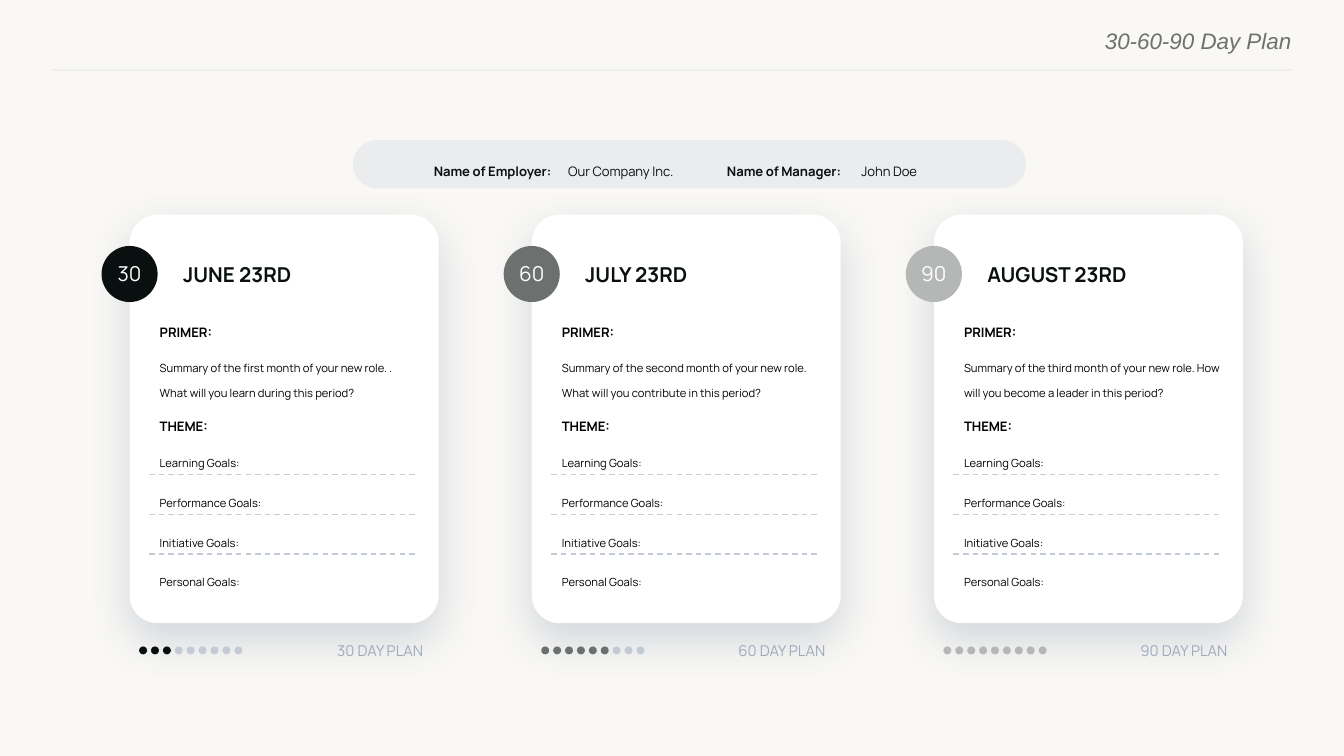
from dataclasses import dataclass

from lxml.etree import SubElement
from pptx import Presentation
from pptx.dml.color import RGBColor
from pptx.enum.dml import MSO_LINE_DASH_STYLE as Dash
from pptx.enum.shapes import MSO_CONNECTOR as Connector, MSO_SHAPE as Shape
from pptx.enum.text import MSO_ANCHOR as Anchor, PP_ALIGN as Align
from pptx.oxml.ns import qn
from pptx.util import Cm, Pt

PAPER = RGBColor(0xF9, 0xF8, 0xF5)
WHITE = RGBColor(0xFF, 0xFF, 0xFF)
BLACK = RGBColor(0x00, 0x00, 0x00)
INK = RGBColor(0x09, 0x10, 0x0F)
GRAY = RGBColor(0x6C, 0x70, 0x6F)
SILVER = RGBColor(0xB5, 0xB7, 0xB7)
MIST = RGBColor(0x9E, 0xAA, 0xBE)
RULE = RGBColor(0xC4, 0xCC, 0xD7)
HAIRLINE = RGBColor(0xEF, 0xEF, 0xEF)
SHADOW = RGBColor(0x47, 0x5D, 0x84)

FONT = "Manrope"
HEADING_SPACING, BODY_SPACING = 1.67, 1.88
CARD_LEFT, CARD_PITCH = 2.45, 7.6
GOAL_TOP, RULE_TOP, GOAL_PITCH = 8.31, 8.97, 0.75
DOT_COUNT, DOT_SPAN = 9, 1.8
GOALS = ("Learning Goals:", "Performance Goals:", "Initiative Goals:", "Personal Goals:")


@dataclass(frozen=True)
class Plan:
    days: int
    color: RGBColor
    date: str
    primer: str
    primer_width: float = 5.0
    primer_height: float = 1.55


@dataclass(frozen=True)
class Detail:
    label: str
    value: str
    left: float
    width: float


PLANS = (
    Plan(30, INK, "JUNE 23RD",
         "Summary of the first month of your new role. . What will you learn during this period?"),
    Plan(60, GRAY, "JULY 23RD",
         "Summary of the second month of your new role. What will you contribute in this period?"),
    Plan(90, SILVER, "AUGUST 23RD",
         "Summary of the third month of your new role. How will you become a leader in this period?",
         5.18, 1.93),
)
DETAILS = (
    Detail("Name of Employer:", "Our Company Inc.", 8.1, 5.54),
    Detail("Name of Manager:", "John Doe", 13.64, 4.32),
)


def set_alpha(shape, percent: int) -> None:
    color = shape.fill._xPr.find(qn("a:solidFill"))[0]
    SubElement(color, qn("a:alpha"), val=str(percent * 1000))


def add_filled(shapes, kind, left: float, top: float, width: float, height: float,
               color: RGBColor):
    shape = shapes.add_shape(kind, Cm(left), Cm(top), Cm(width), Cm(height))
    shape.shadow.inherit = False
    shape.fill.solid()
    shape.fill.fore_color.rgb = color
    shape.line.fill.background()
    return shape


def add_soft_shadow(shape) -> None:
    effects = shape._element.spPr.find(qn("a:effectLst"))
    outer = SubElement(effects, qn("a:outerShdw"), blurRad=str(Pt(23)), dist=str(Pt(8.7)),
                       dir="5400000", algn="t", rotWithShape="0")
    color = SubElement(outer, qn("a:srgbClr"), val=str(SHADOW))
    SubElement(color, qn("a:alpha"), val="22000")


def add_rule(shapes, left: float, top: float, width: float, color: RGBColor):
    rule = shapes.add_connector(Connector.STRAIGHT, Cm(left), Cm(top), Cm(left + width), Cm(top))
    rule.line.color.rgb = color
    rule.line.width = Pt(0.75)
    SubElement(rule._element.spPr, qn("a:effectLst"))
    return rule


def set_margins(frame, side: float, top: float, bottom: float) -> None:
    frame.margin_left = frame.margin_right = Cm(side)
    frame.margin_top, frame.margin_bottom = Cm(top), Cm(bottom)


def add_frame(shapes, left: float, top: float, width: float, height: float, side: float = 0.1):
    frame = shapes.add_textbox(Cm(left), Cm(top), Cm(width), Cm(height)).text_frame
    frame.word_wrap = True
    set_margins(frame, side, 0.1, 0.1)
    return frame


def style(paragraph, size: float, color: RGBColor, bold: bool | None = None,
          spacing: float | None = None, align=None, name: str = FONT) -> None:
    font = paragraph.font
    font.name, font.size, font.bold = name, Pt(size), bold
    font.color.rgb = color
    paragraph.line_spacing = spacing
    paragraph.alignment = align


def write(paragraph, text: str, size: float, color: RGBColor, **options) -> None:
    paragraph.text = text
    style(paragraph, size, color, **options)


def draw_header(slide) -> None:
    title = slide.shapes.title
    title.left, title.top, title.width, title.height = Cm(12.5), Cm(0.51), Cm(11.91), Cm(0.46)
    frame = title.text_frame
    frame.vertical_anchor = Anchor.TOP
    set_margins(frame, 0, 0, 0)
    heading = frame.paragraphs[0]
    write(heading, "30-60-90 Day Plan", 12, GRAY, align=Align.RIGHT, name="Arial")
    heading.font.italic = True
    add_rule(slide.shapes, 0.99, 1.32, 23.42, HAIRLINE)


def draw_details(slide) -> None:
    shapes = slide.shapes.add_group_shape().shapes
    pill = add_filled(shapes, Shape.ROUNDED_RECTANGLE, 6.67, 2.65, 12.72, 0.91, RULE)
    pill.adjustments[0] = 0.5
    set_alpha(pill, 25)
    for detail in DETAILS:
        line = add_frame(shapes, detail.left, 2.79, detail.width, 0.58).paragraphs[0]
        style(line, 7, INK, spacing=HEADING_SPACING)
        label = line.add_run()
        label.text = detail.label
        label.font.bold = True
        line.add_run().text = f"\t{detail.value}"


def draw_progress(slide, plan: Plan, left: float) -> None:
    dots = slide.shapes.add_group_shape().shapes
    for index in range(DOT_COUNT):
        done = index < plan.days // 10
        dot = add_filled(dots, Shape.OVAL, left + 0.18 + index * DOT_SPAN / (DOT_COUNT - 1),
                         12.22, 0.15, 0.15, plan.color if done else MIST)
        if not done:
            set_alpha(dot, 50)
    caption = add_frame(slide.shapes, left + 1.94, 12.04, 3.71, 0.53)
    caption.vertical_anchor = Anchor.MIDDLE
    write(caption.paragraphs[0], f"{plan.days} DAY PLAN", 8, MIST, align=Align.RIGHT)


def draw_plan(slide, plan: Plan, left: float) -> None:
    shapes = slide.shapes
    text_left = left + 0.47
    card = add_filled(shapes, Shape.ROUNDED_RECTANGLE, left, 4.06, 5.84, 7.72, WHITE)
    card.adjustments[0] = 0.09
    add_soft_shadow(card)

    badge = add_filled(shapes, Shape.OVAL, left - 0.53, 4.65, 1.06, 1.06, plan.color).text_frame
    badge.vertical_anchor = Anchor.MIDDLE
    set_margins(badge, 0.1, 0, 0.03)
    write(badge.paragraphs[0], str(plan.days), 11, WHITE, align=Align.CENTER)

    date = add_frame(shapes, left + 0.83, 4.85, 5, 0.64, side=0.18)
    write(date.paragraphs[0], plan.date, 11, INK, bold=True)

    primer = add_frame(shapes, text_left, 5.84, plan.primer_width, plan.primer_height)
    write(primer.paragraphs[0], "PRIMER:", 7, BLACK, bold=True, spacing=HEADING_SPACING)
    summary = primer.add_paragraph()
    write(summary, plan.primer, 6, BLACK, spacing=BODY_SPACING)
    summary.space_before = Pt(5)

    theme = add_frame(shapes, text_left, 7.62, 5, 0.58)
    write(theme.paragraphs[0], "THEME:", 7, BLACK, bold=True, spacing=HEADING_SPACING)

    for index, name in enumerate(GOALS):
        goal = add_frame(shapes, text_left, GOAL_TOP + index * GOAL_PITCH, 5, 0.58)
        write(goal.paragraphs[0], name, 6, BLACK, spacing=BODY_SPACING)
    for index in range(len(GOALS) - 1):
        rule = add_rule(shapes, left + 0.37, RULE_TOP + index * GOAL_PITCH, 5.07, RULE)
        rule.line.dash_style = Dash.DASH


def main() -> None:
    deck = Presentation()
    deck.slide_width, deck.slide_height = Cm(25.4), Cm(14.29)
    slide = deck.slides.add_slide(deck.slide_layouts.get_by_name("Title Only"))
    slide.background.fill.solid()
    slide.background.fill.fore_color.rgb = PAPER
    draw_header(slide)
    for index, plan in enumerate(PLANS):
        left = CARD_LEFT + index * CARD_PITCH
        draw_plan(slide, plan, left)
        draw_progress(slide, plan, left)
    draw_details(slide)
    deck.save("out.pptx")


if __name__ == "__main__":
    main()
